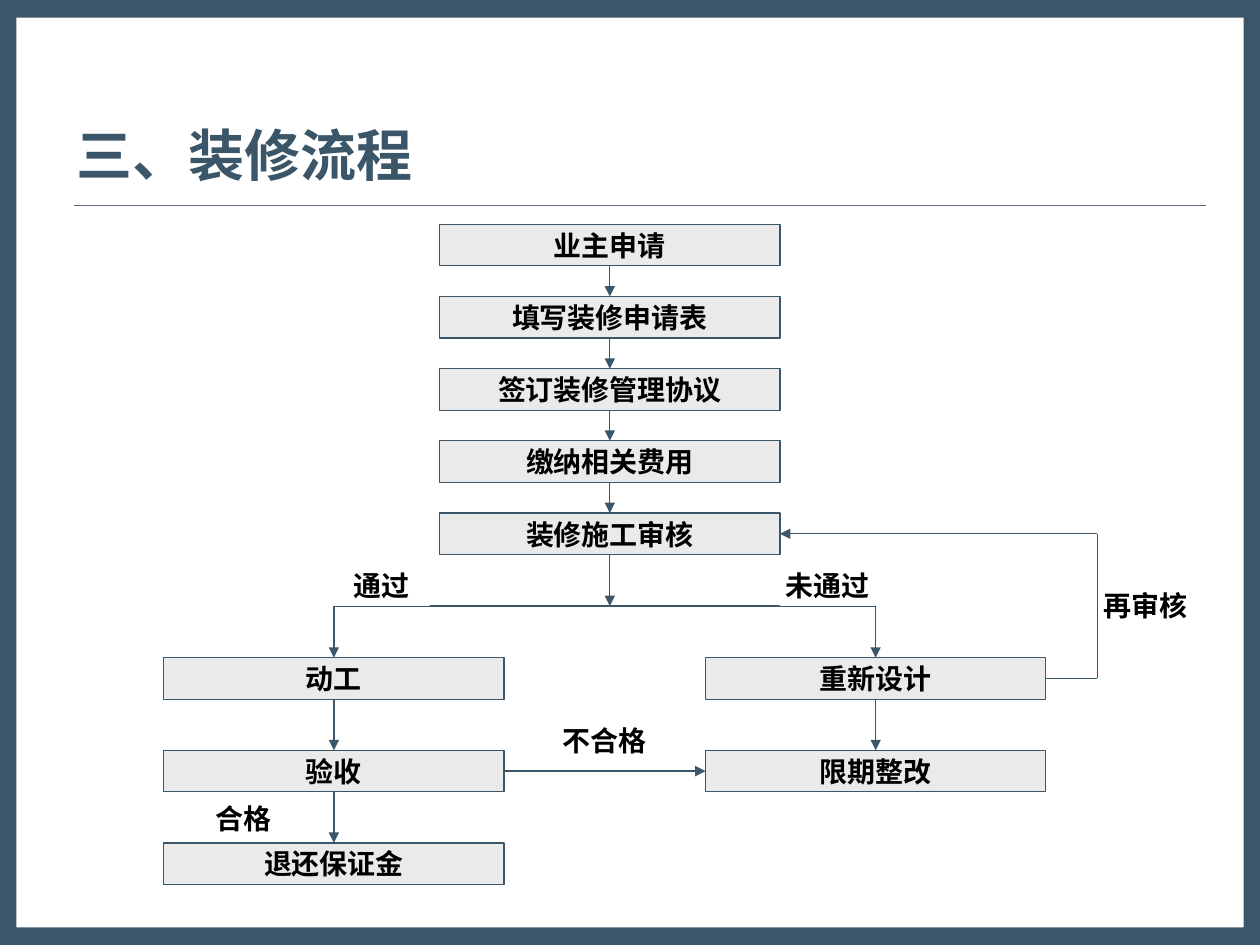
from dataclasses import dataclass
from itertools import pairwise

from lxml.etree import SubElement
from pptx import Presentation
from pptx.dml.color import RGBColor
from pptx.enum.shapes import MSO_CONNECTOR as Connector, MSO_SHAPE as Preset
from pptx.enum.text import MSO_ANCHOR as Anchor, PP_ALIGN as Align
from pptx.oxml.ns import qn
from pptx.util import Inches, Pt


@dataclass(frozen=True)
class Theme:
    """Colours, fonts and type sizes of the slide."""
    accent: RGBColor = RGBColor(0x3C, 0x56, 0x69)
    rule: RGBColor = RGBColor(0x60, 0x6B, 0x8D)
    box: RGBColor = RGBColor(0xEA, 0xEA, 0xEA)
    paper: RGBColor = RGBColor(0xFF, 0xFF, 0xFF)
    ink: RGBColor = RGBColor(0, 0, 0)
    title_font: str = "Arial"
    body_font: str = "Times New Roman"
    title_size: Pt = Pt(32)
    body_size: Pt = Pt(16)
    line_width: Pt = Pt(0.75)


THEME = Theme()
WIDTH, HEIGHT = 10, 7.5
BOX_WIDTH, BOX_HEIGHT, LABEL_WIDTH = 2.7, 0.33, 0.76
LEFT, MIDDLE, RIGHT = 1.3, 3.49, 5.6
MAIN_TOP, MAIN_STEP = 1.78, 0.573
BRANCH_TOP, BRANCH_STEP = 5.22, 0.735
FORK, LOOP = 4.81, 8.71
TOP_SITE, LEFT_SITE, BOTTOM_SITE, RIGHT_SITE = range(4)


def style_text(shape, text, font_name, size, color):
    """Put one bold line of text into a shape."""
    shape.text_frame.text = text
    font = shape.text_frame.paragraphs[0].runs[0].font
    font.name, font.size, font.bold = font_name, size, True
    font.color.rgb = color


def add_frame(slide):
    """Draw the border band around the slide."""
    width, height = Inches(WIDTH), Inches(HEIGHT)
    side, edge = Inches(0.13), Inches(0.14)
    builder = slide.shapes.build_freeform(0, 0)
    builder.add_line_segments([(width, 0), (width, height), (0, height)])
    builder.move_to(side, edge)
    builder.add_line_segments([(side, height - edge),
                               (width - side, height - edge),
                               (width - side, edge)])
    frame = builder.convert_to_shape()
    frame.shadow.inherit = False
    frame.fill.solid()
    frame.fill.fore_color.rgb = THEME.accent
    frame.line.fill.background()


def add_title(slide, text):
    """Place the title text in its placeholder."""
    title = slide.shapes.title
    title.left, title.top = Inches(0.5), Inches(0.3)
    title.width, title.height = Inches(9), Inches(1.25)
    style_text(title, text, THEME.title_font, THEME.title_size, THEME.accent)
    frame = title.text_frame
    frame.vertical_anchor = Anchor.BOTTOM
    frame.margin_left = frame.margin_right = Inches(0.11)
    frame.margin_top = frame.margin_bottom = Inches(0.06)
    frame.paragraphs[0].alignment = Align.LEFT


def add_box(slide, text, left, top, width=BOX_WIDTH, fill=THEME.box, line=THEME.accent):
    """Add a rectangle with centred text, filled and outlined on request."""
    box = slide.shapes.add_shape(Preset.RECTANGLE, Inches(left), Inches(top),
                                 Inches(width), Inches(BOX_HEIGHT))
    box.shadow.inherit = False
    box.fill.solid()
    box.fill.fore_color.rgb = fill
    if line is None:
        box.line.fill.background()
    else:
        box.line.color.rgb = line
        box.line.width = THEME.line_width
    style_text(box, text, THEME.body_font, THEME.body_size, THEME.ink)
    frame = box.text_frame
    frame.word_wrap = False
    frame.vertical_anchor = Anchor.MIDDLE
    frame.paragraphs[0].alignment = Align.CENTER
    return box


def add_label(slide, text, left, top):
    """Add a white label beside a line."""
    add_box(slide, text, left, top, LABEL_WIDTH, THEME.paper, None)


def add_column(slide, texts, left, top, step):
    """Stack boxes at equal steps and join each to the next."""
    boxes = [add_box(slide, text, left, top + row * step)
             for row, text in enumerate(texts)]
    for upper, lower in pairwise(boxes):
        join(slide, upper, BOTTOM_SITE, lower, TOP_SITE)
    return boxes


def add_line(slide, start, end, color=THEME.accent, arrow=False):
    """Draw a straight line between two points, with an optional arrowhead."""
    line = slide.shapes.add_connector(Connector.STRAIGHT,
                                      *map(Inches, (*start, *end)))
    line.line.color.rgb = color
    line.line.width = THEME.line_width
    if arrow:
        SubElement(line.line._get_or_add_ln(), qn("a:tailEnd"), type="triangle")
    SubElement(line._element.spPr, qn("a:effectLst"))
    return line


def join(slide, source, source_site, target, target_site):
    """Glue an arrow from one box to another."""
    arrow = add_line(slide, (0, 0), (1, 1), arrow=True)
    arrow.begin_connect(source, source_site)
    arrow.end_connect(target, target_site)


def add_fork(slide):
    """Split the review step into its two outcomes."""
    left, middle, right = (column + BOX_WIDTH / 2 for column in (LEFT, MIDDLE, RIGHT))
    review_bottom = MAIN_TOP + 4 * MAIN_STEP + BOX_HEIGHT
    add_line(slide, (middle, review_bottom), (middle, FORK), arrow=True)
    add_line(slide, (left, FORK), (right, FORK))
    for center in (left, right):
        add_line(slide, (center, FORK), (center, BRANCH_TOP), arrow=True)


def add_loop(slide):
    """Lead the redesign step back to the review step."""
    redesign = BRANCH_TOP + BOX_HEIGHT / 2
    review = MAIN_TOP + 4 * MAIN_STEP + BOX_HEIGHT / 2
    corners = [(RIGHT + BOX_WIDTH, redesign), (LOOP, redesign),
               (LOOP, review), (MIDDLE + BOX_WIDTH, review)]
    for start, end in pairwise(corners):
        add_line(slide, start, end, arrow=end == corners[-1])


def main():
    """Build the flow chart slide and save it."""
    presentation = Presentation()
    presentation.slide_width, presentation.slide_height = Inches(WIDTH), Inches(HEIGHT)
    slide = presentation.slides.add_slide(presentation.slide_layouts[5])
    add_frame(slide)
    add_line(slide, (0.59, 1.63), (9.57, 1.63), THEME.rule)
    add_title(slide, "三、装修流程")

    add_column(slide, ["业主申请", "填写装修申请表", "签订装修管理协议", "缴纳相关费用",
                       "装修施工审核"], MIDDLE, MAIN_TOP, MAIN_STEP)
    passed = add_column(slide, ["动工", "验收", "退还保证金"],
                        LEFT, BRANCH_TOP, BRANCH_STEP)
    failed = add_column(slide, ["重新设计", "限期整改"],
                        RIGHT, BRANCH_TOP, BRANCH_STEP)
    join(slide, passed[1], RIGHT_SITE, failed[1], LEFT_SITE)
    add_fork(slide)

    label_top = FORK - BOX_HEIGHT
    add_label(slide, "通过", LEFT + BOX_WIDTH / 2, label_top)
    add_label(slide, "未通过", MIDDLE + BOX_WIDTH, label_top)
    add_label(slide, "不合格", 4.42, 5.71)
    add_label(slide, "合格", 1.55, 6.33)
    add_label(slide, "再审核", LOOP, 4.64)
    add_loop(slide)
    presentation.save("out.pptx")


if __name__ == "__main__":
    main()
